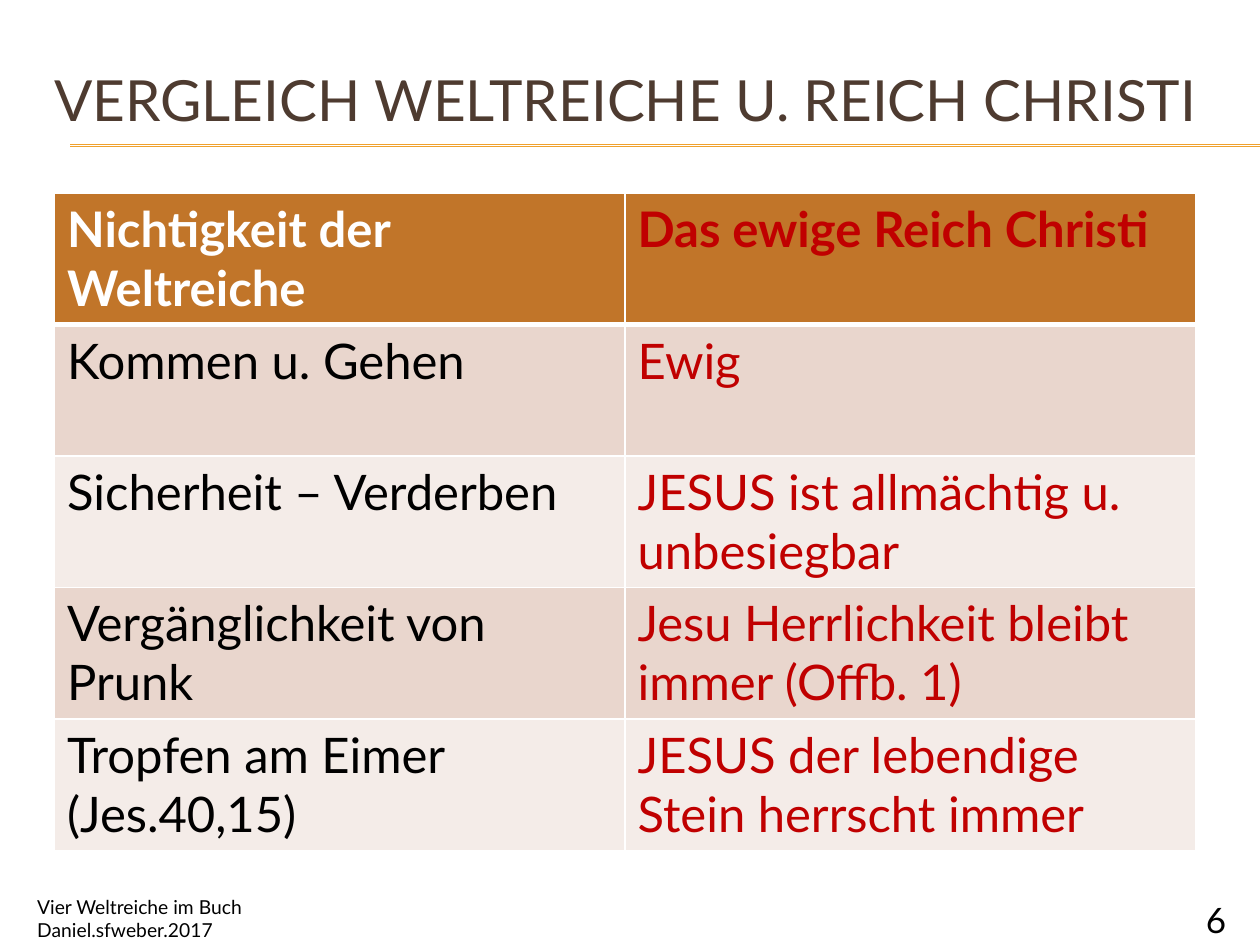
from dataclasses import dataclass

from lxml.etree import SubElement
from pptx import Presentation
from pptx.dml.color import RGBColor
from pptx.enum.shapes import MSO_CONNECTOR
from pptx.enum.text import MSO_ANCHOR, MSO_AUTO_SIZE, PP_ALIGN
from pptx.oxml.ns import qn
from pptx.util import Cm, Pt


@dataclass(frozen=True)
class Theme:
    font: str = "Lato"
    title: str = "4E3B30"
    text: str = "000000"
    light: str = "FFFFFF"
    accent: str = "C00000"
    rule: str = "F0A22E"
    header: str = "C17529"
    bands: tuple = ("E9D6CD", "F4ECE8")
    title_size: float = 32.4
    table_size: int = 28
    number_size: int = 20
    footer_size: int = 11


def write_text(frame, text, font, size, color, bold=False, align=PP_ALIGN.LEFT):
    """Fill a text frame with one formatted paragraph."""
    frame.word_wrap = True
    paragraph = frame.paragraphs[0]
    paragraph.alignment = align
    run = paragraph.add_run()
    run.text = text
    run.font.name = font
    run.font.size = Pt(size)
    run.font.bold = bold
    run.font.color.rgb = RGBColor.from_string(color)


def set_border(cell, side, color, width):
    """Draw one side of a cell: L, R, T or B."""
    line = SubElement(cell._tc.get_or_add_tcPr(), qn(f"a:ln{side}"), w=str(Pt(width)))
    fill = SubElement(line, qn("a:solidFill"))
    SubElement(fill, qn("a:srgbClr"), val=color)


class SlideBuilder:
    def __init__(self, slide, theme):
        self.slide = slide
        self.theme = theme

    def title(self, text, left, top, width, height):
        shape = self.slide.shapes.title
        shape.left, shape.top = Cm(left), Cm(top)
        shape.width, shape.height = Cm(width), Cm(height)
        frame = shape.text_frame
        frame.auto_size = MSO_AUTO_SIZE.NONE
        frame.vertical_anchor = MSO_ANCHOR.MIDDLE
        write_text(frame, text, self.theme.font, self.theme.title_size, self.theme.title)

    def rule(self, left, right, y):
        connector = self.slide.shapes.add_connector(
            MSO_CONNECTOR.STRAIGHT, Cm(left), Cm(y), Cm(right), Cm(y))
        connector.line.color.rgb = RGBColor.from_string(self.theme.rule)
        connector.line.width = Pt(0.75)
        SubElement(connector._element.spPr, qn("a:effectLst"))

    def label(self, text, left, top, width, height, size, align=PP_ALIGN.LEFT):
        shape = self.slide.shapes.add_textbox(Cm(left), Cm(top), Cm(width), Cm(height))
        write_text(shape.text_frame, text, self.theme.font, size, self.theme.text, align=align)

    def table(self, rows, left, top, width, row_height):
        theme = self.theme
        table = self.slide.shapes.add_table(
            len(rows), len(rows[0]), Cm(left), Cm(top),
            Cm(width), Cm(row_height * len(rows))).table
        for row_index, row in enumerate(rows):
            is_header = row_index == 0
            fill = theme.header if is_header else theme.bands[(row_index - 1) % 2]
            first_color = theme.light if is_header else theme.text
            for column_index, text in enumerate(row):
                cell = table.cell(row_index, column_index)
                for side in "LRTB":
                    # The header is set off by a thick line below it
                    thick = (row_index, side) in ((0, "B"), (1, "T"))
                    set_border(cell, side, theme.light, 3 if thick else 1)
                cell.fill.solid()
                cell.fill.fore_color.rgb = RGBColor.from_string(fill)
                color = theme.accent if column_index else first_color
                write_text(cell.text_frame, text, theme.font, theme.table_size, color,
                           bold=is_header)


def main():
    presentation = Presentation()
    presentation.slide_width, presentation.slide_height = Cm(25.4), Cm(19.05)
    theme = Theme()
    builder = SlideBuilder(
        presentation.slides.add_slide(presentation.slide_layouts[5]), theme)

    # Heading with its double rule
    for y in (2.92, 2.95):
        builder.rule(1.42, 25.4, y)
    builder.title("VERGLEICH WELTREICHE U. REICH CHRISTI", 0.84, 1.27, 24.13, 1.45)

    # Page number and footer
    builder.label("6", 22.86, 17.98, 2.11, 0.69, theme.number_size, PP_ALIGN.RIGHT)
    builder.label("Vier Weltreiche im Buch Daniel.sfweber.2017",
                  0.5, 17.93, 8.05, 0.81, theme.footer_size)

    # Comparison table
    builder.table([
        ("Nichtigkeit der Weltreiche", "Das ewige Reich Christi"),
        ("Kommen u. Gehen", "Ewig"),
        ("Sicherheit – Verderben", "JESUS ist allmächtig u. unbesiegbar"),
        ("Vergänglichkeit von Prunk", "Jesu Herrlichkeit bleibt immer (Offb. 1)"),
        ("Tropfen am Eimer (Jes.40,15)", "JESUS der lebendige Stein herrscht immer"),
    ], left=1.1, top=3.89, width=23, row_height=2.65)

    presentation.save("out.pptx")


if __name__ == "__main__":
    main()
